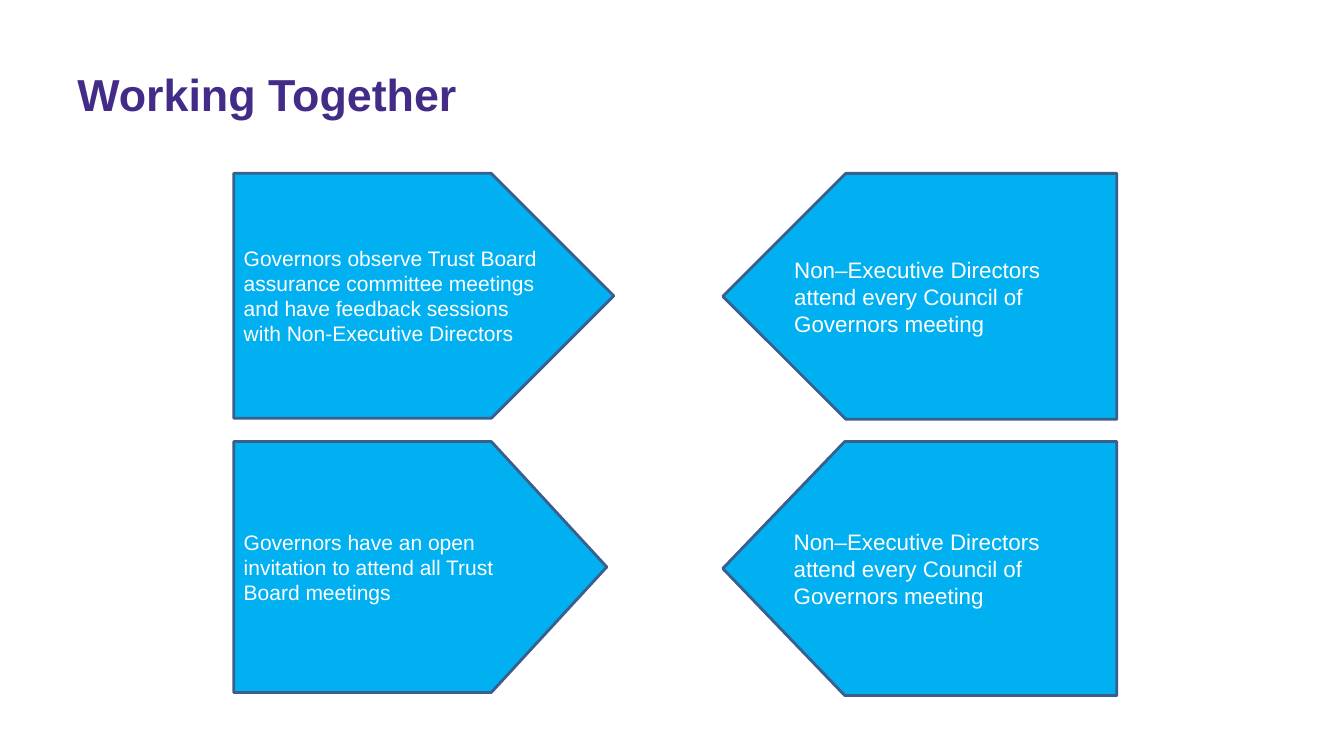
from pptx import Presentation
from pptx.dml.color import RGBColor
from pptx.enum.shapes import MSO_SHAPE as Shape
from pptx.enum.text import MSO_ANCHOR as Anchor, PP_ALIGN as Align
from pptx.oxml.ns import qn
from pptx.util import Inches, Pt

PURPLE = RGBColor(0x42, 0x2C, 0x88)
SKY = RGBColor(0x00, 0xB0, 0xF0)
STEEL = RGBColor(0x3A, 0x5F, 0x8C)
WHITE = RGBColor(0xFF, 0xFF, 0xFF)

# Grid lines and widths, in percent of the slide's size
LEFT_COLUMN, RIGHT_COLUMN = 17.4, 53.78
TOP_ROW, BOTTOM_ROW = 22.93, 58.4
RIGHT_WIDTH = 29.32

DIRECTORS = "Non–Executive Directors attend every Council of Governors meeting"


class SlideBuilder:
    font_name = "Arial"

    def __init__(self, presentation):
        self.width = presentation.slide_width
        self.height = presentation.slide_height
        self.slide = presentation.slides.add_slide(presentation.slide_layouts[5])

    def box(self, left, top, width, height):
        """Turn percentages of the slide into lengths."""
        return (round(self.width * left / 100), round(self.height * top / 100),
                round(self.width * width / 100), round(self.height * height / 100))

    def set_text(self, shape, text, size, color, bold=False):
        frame = shape.text_frame
        frame.word_wrap = True
        frame.vertical_anchor = Anchor.MIDDLE
        paragraph = frame.paragraphs[0]
        paragraph.alignment = Align.LEFT
        run = paragraph.add_run()
        run.text = text
        run.font.name = self.font_name
        run.font.size = Pt(size)
        run.font.bold = bold
        run.font.color.rgb = color

    def title(self, text, *place):
        shape = self.slide.shapes.title
        shape.left, shape.top, shape.width, shape.height = self.box(*place)
        self.set_text(shape, text, 32, PURPLE, bold=True)

    def pentagon(self, text, size, place, point=0.5, flipped=False):
        shape = self.slide.shapes.add_shape(Shape.PENTAGON, *self.box(*place))
        shape.adjustments[0] = point
        shape.shadow.inherit = False
        shape.fill.solid()
        shape.fill.fore_color.rgb = SKY
        shape.line.color.rgb = STEEL
        shape.line.width = Pt(2)
        if flipped:
            shape._element.spPr.find(qn("a:xfrm")).set("flipH", "1")
        self.set_text(shape, text, size, WHITE)


def main():
    presentation = Presentation()
    presentation.slide_width = Inches(13.33)
    presentation.slide_height = Inches(7.5)
    builder = SlideBuilder(presentation)

    builder.title("Working Together", 5, 4, 90, 16.67)

    # Governors, pointing right
    builder.pentagon(
        "Governors observe Trust Board assurance committee meetings "
        "and have feedback sessions with Non-Executive Directors",
        15, (LEFT_COLUMN, TOP_ROW, 28.27, 32.4))
    builder.pentagon(
        "Governors have an open invitation to attend all Trust Board meetings",
        15, (LEFT_COLUMN, BOTTOM_ROW, 27.75, 33.2), point=0.46)

    # Directors, pointing left
    for top, height, point in ((TOP_ROW, 32.53, 0.5), (BOTTOM_ROW, 33.6, 0.48)):
        builder.pentagon(DIRECTORS, 16, (RIGHT_COLUMN, top, RIGHT_WIDTH, height),
                         point, flipped=True)

    presentation.save("out.pptx")


if __name__ == "__main__":
    main()
